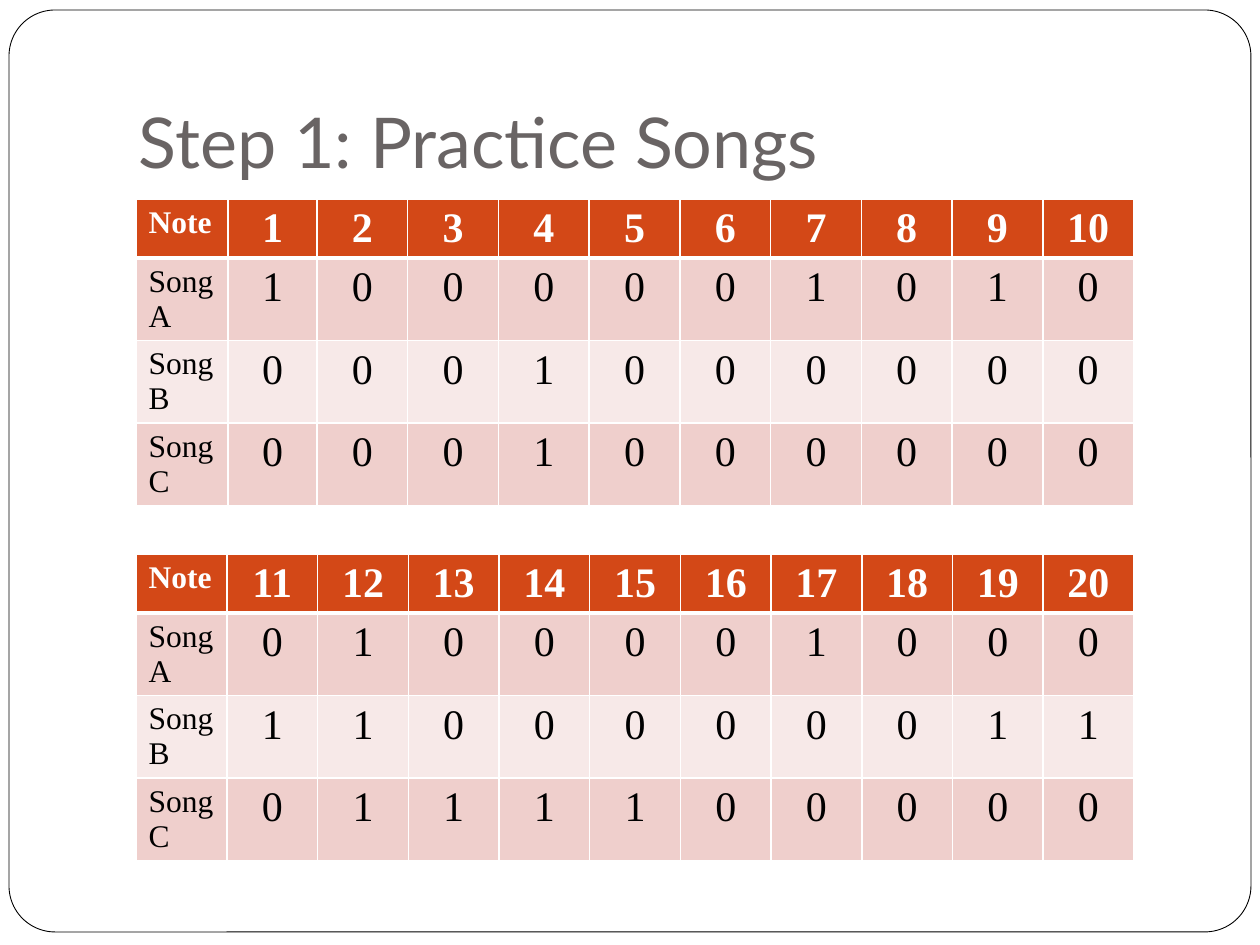
from lxml.etree import SubElement
from pptx import Presentation
from pptx.dml.color import RGBColor as RGB
from pptx.enum.shapes import MSO_SHAPE as Shape
from pptx.enum.text import MSO_ANCHOR as Anchor, MSO_AUTO_SIZE as Fit, PP_ALIGN as Align
from pptx.oxml.ns import qn
from pptx.util import Emu, Pt

WHITE = RGB(0xFF, 0xFF, 0xFF)
BLACK = RGB(0, 0, 0)
GREY = RGB(0x69, 0x64, 0x64)
RUST = RGB(0xD3, 0x48, 0x17)
ROSE = RGB(0xEF, 0xCF, 0xCC)
PALE = RGB(0xF7, 0xE9, 0xE8)


def px(num):
    return Emu(round(num * 914400 / 126))


class Deck:
    """Style and current slide of the song deck."""

    head = "Lato"
    body = "Times New Roman"

    def __init__(self):
        self.prs = Presentation()
        self.prs.slide_width, self.prs.slide_height = px(1260), px(945)
        self.slide = self.prs.slides.add_slide(self.prs.slide_layouts[5])

    def style(self, para, font, size, color, bold=False):
        for run in para.runs:
            run.font.name, run.font.size = font, Pt(size)
            run.font.color.rgb, run.font.bold = color, bold

    def frame(self, left, top, width, height):
        box = self.slide.shapes.add_shape(
            Shape.ROUNDED_RECTANGLE, px(left), px(top), px(width), px(height))
        box.adjustments[0] = 0.05
        box.shadow.inherit = False
        box.fill.solid()
        box.fill.fore_color.rgb = WHITE
        box.line.color.rgb = BLACK
        box.line.width = Pt(0.5)
        self.slide.shapes.title.element.addprevious(box.element)

    def title(self, text, left, top, width, height):
        box = self.slide.shapes.title
        box.left, box.top, box.width, box.height = map(px, (left, top, width, height))
        area = box.text_frame
        area.text = text
        area.auto_size, area.word_wrap = Fit.NONE, True
        area.vertical_anchor = Anchor.BOTTOM
        area.margin_left = area.margin_right = area.margin_bottom = px(13)
        area.margin_top = px(6)
        para = area.paragraphs[0]
        para.alignment = Align.LEFT
        self.style(para, self.head, 40, GREY)

    def edge(self, cell, side, size):
        line = SubElement(cell._tc.get_or_add_tcPr(), qn(f"a:ln{side}"), w=str(Pt(size)))
        fill = SubElement(line, qn("a:solidFill"))
        SubElement(fill, qn("a:srgbClr"), val=str(WHITE))

    def cell(self, cell, text, row, col):
        for side in "LRTB":
            thick = (row, side) in ((0, "B"), (1, "T"))
            self.edge(cell, side, 3 if thick else 1)
        cell.fill.solid()
        cell.fill.fore_color.rgb = (PALE, ROSE)[row % 2] if row else RUST
        cell.text_frame.text = str(text)
        para = cell.text_frame.paragraphs[0]
        para.alignment = Align.CENTER if col else Align.LEFT
        self.style(para, self.body, 24 if col else 18,
                   BLACK if row else WHITE, row == 0)

    def table(self, rows, lead, left, top, width, height):
        count = len(rows[0])
        item = self.slide.shapes.add_table(
            len(rows), count, px(left), px(top), px(width), px(height))
        grid = item.table
        rest = (width - sum(lead)) / (count - len(lead))
        for col, line in enumerate(grid.columns):
            line.width = px(lead[col] if col < len(lead) else rest)
        for row, vals in enumerate(rows):
            grid.rows[row].height = px(52)
            for col, val in enumerate(vals):
                self.cell(grid.cell(row, col), val, row, col)
        item.height = px(height)


def songs(first, *notes):
    rows = [["Note", *range(first, first + 10)]]
    return rows + [[f"Song {name}", *line] for name, line in zip("ABC", notes)]


def main():
    deck = Deck()
    deck.frame(9, 10, 1242, 922)
    deck.title("Step 1: Practice Songs", 126, 38, 1071, 158)
    early = songs(1, "1000001010", "0001000000", "0001000000")
    late = songs(11, "0100001000", "1100000011", "0111100000")
    deck.table(early, [92, 89], 136, 199, 998, 328)
    deck.table(late, [91], 136, 554, 998, 328)
    deck.prs.save("out.pptx")


if __name__ == "__main__":
    main()
